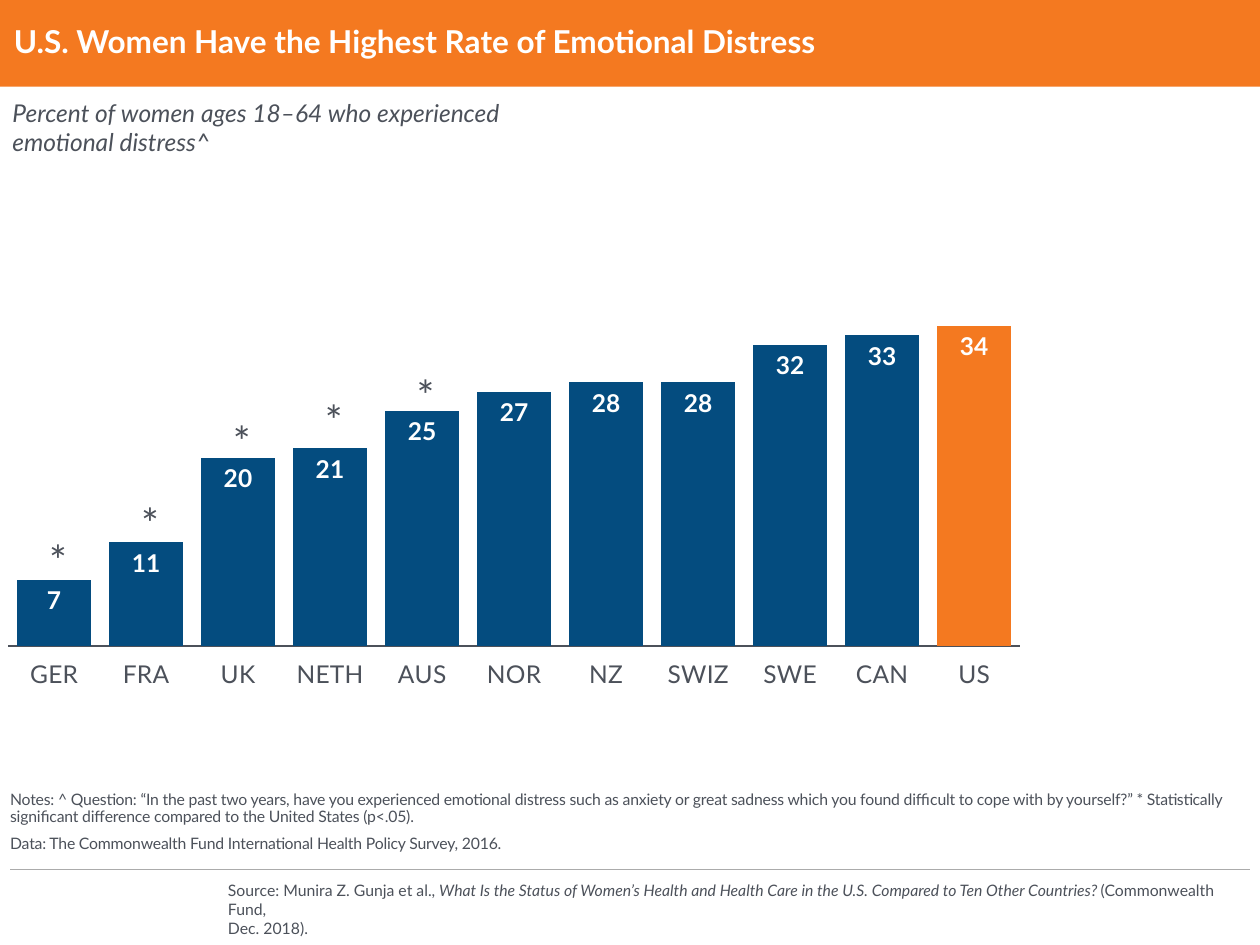
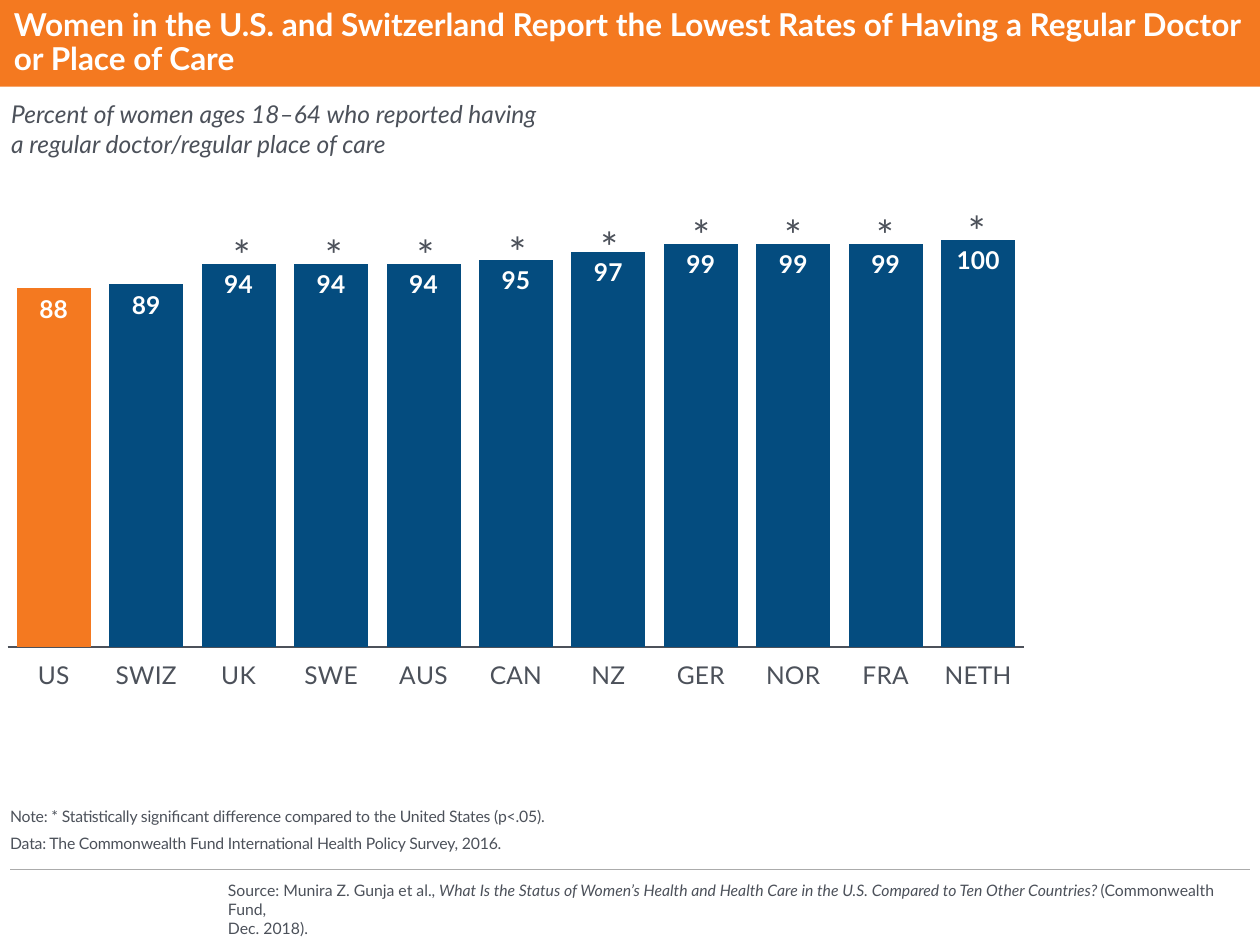
"""Builds two column-chart slides on women's health in eleven countries."""
from lxml import etree
from pptx import Presentation
from pptx.chart.data import CategoryChartData
from pptx.dml.color import RGBColor
from pptx.enum.chart import XL_CHART_TYPE, XL_LABEL_POSITION, XL_TICK_LABEL_POSITION, XL_TICK_MARK
from pptx.enum.shapes import MSO_CONNECTOR, MSO_SHAPE
from pptx.enum.text import MSO_ANCHOR
from pptx.oxml.ns import qn
from pptx.util import Pt

COLUMN = XL_CHART_TYPE.COLUMN_CLUSTERED
INSIDE_END = XL_LABEL_POSITION.INSIDE_END
LABELS_LOW = XL_TICK_LABEL_POSITION.LOW
NO_TICK = XL_TICK_MARK.NONE
STRAIGHT = MSO_CONNECTOR.STRAIGHT
RECT = MSO_SHAPE.RECTANGLE
TOP, MIDDLE, BOTTOM = MSO_ANCHOR.TOP, MSO_ANCHOR.MIDDLE, MSO_ANCHOR.BOTTOM

ORANGE = RGBColor(0xF4, 0x79, 0x20)
BLUE = RGBColor(0x04, 0x4C, 0x7F)
INK = RGBColor(0x4C, 0x51, 0x5A)
RULE = RGBColor(0xAB, 0xAB, 0xAB)
WHITE = RGBColor(0xFF, 0xFF, 0xFF)
FONT = "Lato"
STAR_LEFT, STAR_STEP = 21, 52.5

SOURCE = [
    ("Source: Munira Z. Gunja et al., ", False),
    ("What Is the Status of Women’s Health and Health Care in the U.S. "
     "Compared to Ten Other Countries? ", True),
    ("(Commonwealth Fund, ", False),
    ("Dec. 2018).", False),
]
DATA = "Data: The Commonwealth Fund International Health Policy Survey, 2016."

SLIDES = [
    dict(
        title="U.S. Women Have the Highest Rate of Emotional Distress",
        subtitle="Percent of women ages 18–64 who experienced emotional distress^",
        subtitle_box=(0, 52.5, 300, 41),
        note="Notes: ^ Question: “In the past two years, have you experienced emotional distress "
             "such as anxiety or great sadness which you found difficult to cope with by yourself?” "
             "* Statistically significant difference compared to the United States (p<.05).",
        chart_box=(-21, 75.6, 612, 324),
        plot=(0.042, 0.076, 0.945, 0.83),
        top_value=50,
        rates={"GER": 7, "FRA": 11, "UK": 20, "NETH": 21, "AUS": 25, "NOR": 27,
               "NZ": 28, "SWIZ": 28, "SWE": 32, "CAN": 33, "US": 34},
        stars={"GER": 301.7, "FRA": 280.8, "UK": 234, "NETH": 221.8, "AUS": 207.4},
    ),
    dict(
        title="Women in the U.S. and Switzerland Report the Lowest Rates of Having "
              "a Regular Doctor or Place of Care",
        subtitle="Percent of women ages 18–64 who reported having \va regular doctor/regular place of care",
        subtitle_box=(-0.7, 53.3, 338, 41),
        note="Note: * Statistically significant difference compared to the United States (p<.05).",
        chart_box=(-28, 69.1, 622.8, 327.6),
        plot=(0.052, 0.207, 0.933, 0.711),
        top_value=100,
        rates={"US": 88, "SWIZ": 89, "UK": 94, "SWE": 94, "AUS": 94, "CAN": 95,
               "NZ": 97, "GER": 99, "NOR": 99, "FRA": 99, "NETH": 100},
        stars={"UK": 127.4, "SWE": 127.4, "AUS": 127.4, "CAN": 126, "NZ": 123.1,
               "GER": 115.9, "NOR": 115.9, "FRA": 115.9, "NETH": 113.8},
    ),
]


def style(font, size, color, bold=False, italic=None):
    font.name, font.size, font.bold, font.italic = FONT, Pt(size), bold, italic
    font.color.rgb = color


def add_text(s, box, lines, size, color=INK, anchor=TOP, inset=True, bold=False, italic=None):
    tf = s.shapes.add_textbox(*map(Pt, box)).text_frame
    tf.word_wrap = True
    tf.vertical_anchor = anchor
    if not inset:
        tf.margin_left = tf.margin_top = tf.margin_right = tf.margin_bottom = 0
    for i, line in enumerate(lines):
        p = tf.add_paragraph() if i else tf.paragraphs[0]
        p.text = line
        style(p.font, size, color, bold, italic)
    return tf


prs = Presentation()
prs.slide_width, prs.slide_height = Pt(720), Pt(540)

for page in SLIDES:
    s = prs.slides.add_slide(prs.slide_layouts[6])

    band = s.shapes.add_shape(RECT, 0, 0, Pt(720), Pt(49.5))
    band.shadow.inherit = False
    band.fill.solid()
    band.fill.fore_color.rgb = ORANGE
    band.line.fill.background()

    p = add_text(s, (130.3, 503.3, 584, 32.4), [""], 9, anchor=MIDDLE, inset=False).paragraphs[0]
    for i, (text, italic) in enumerate(SOURCE):
        if i == len(SOURCE) - 1:
            p.add_line_break()
        r = p.add_run()
        r.text = text
        r.font.italic = italic

    rule = s.shapes.add_connector(STRAIGHT, Pt(714.2), Pt(496.8), Pt(5.8), Pt(496.8))
    rule.line.color.rgb = RULE
    rule.line.width = Pt(0.75)
    etree.SubElement(rule._element.spPr, qn("a:effectLst"))

    data = CategoryChartData(number_format="0")
    data.categories = page["rates"]
    data.add_series("Series 1", page["rates"].values())
    chart = s.shapes.add_chart(COLUMN, *map(Pt, page["chart_box"]), data).chart
    chart.has_legend = chart.has_title = False
    style(chart.font, 18, INK)

    cat = chart.category_axis
    cat.major_tick_mark = cat.minor_tick_mark = NO_TICK
    cat.tick_label_position = LABELS_LOW
    cat.format.line.color.rgb = INK
    cat.format.line.width = Pt(0.75)
    style(cat.tick_labels.font, 14, INK)

    val = chart.value_axis
    val.visible = val.has_major_gridlines = False
    val.minimum_scale, val.maximum_scale, val.major_unit = 0, page["top_value"], 25

    bars = chart.plots[0]
    bars.gap_width = 25
    bars.vary_by_categories = False
    series = bars.series[0]
    series.format.fill.solid()
    series.format.fill.fore_color.rgb = BLUE
    us = series.points[list(page["rates"]).index("US")].format.fill
    us.solid()
    us.fore_color.rgb = ORANGE
    labels = series.data_labels
    labels.show_value = True
    labels.position = INSIDE_END
    labels.number_format, labels.number_format_is_linked = "0", False
    style(labels.font, 14, WHITE, bold=True)

    area = chart._chartSpace.chart.plotArea
    for old in area.findall(qn("c:layout")):
        area.remove(old)
    layout = etree.Element(qn("c:layout"))
    area.insert(0, layout)
    manual = etree.SubElement(layout, qn("c:manualLayout"))
    settings = [("layoutTarget", "inner"), ("xMode", "edge"), ("yMode", "edge")]
    for tag, value in settings + list(zip("xywh", page["plot"])):
        etree.SubElement(manual, qn("c:" + tag)).set("val", str(value))

    for i, country in enumerate(page["rates"]):
        if country in page["stars"]:
            add_text(s, (STAR_LEFT + i * STAR_STEP, page["stars"][country], 21, 28), ["*"], 24)

    tf = add_text(s, (8, 0, 708.5, 49.5), [page["title"]], 18, WHITE, MIDDLE, inset=False, bold=True)
    tf.paragraphs[0].line_spacing = 0.9

    tf = add_text(s, (5.8, 448.6, 708.5, 38.9), [page["note"], DATA], 9, anchor=BOTTOM, inset=False)
    for p in tf.paragraphs:
        p.line_spacing = 0.9
        p.space_after = Pt(6)
        p.runs[0]._r.get_or_add_rPr().set("spc", "-10")

    add_text(s, page["subtitle_box"], [page["subtitle"]], 14, italic=True)

prs.save("out.pptx")
